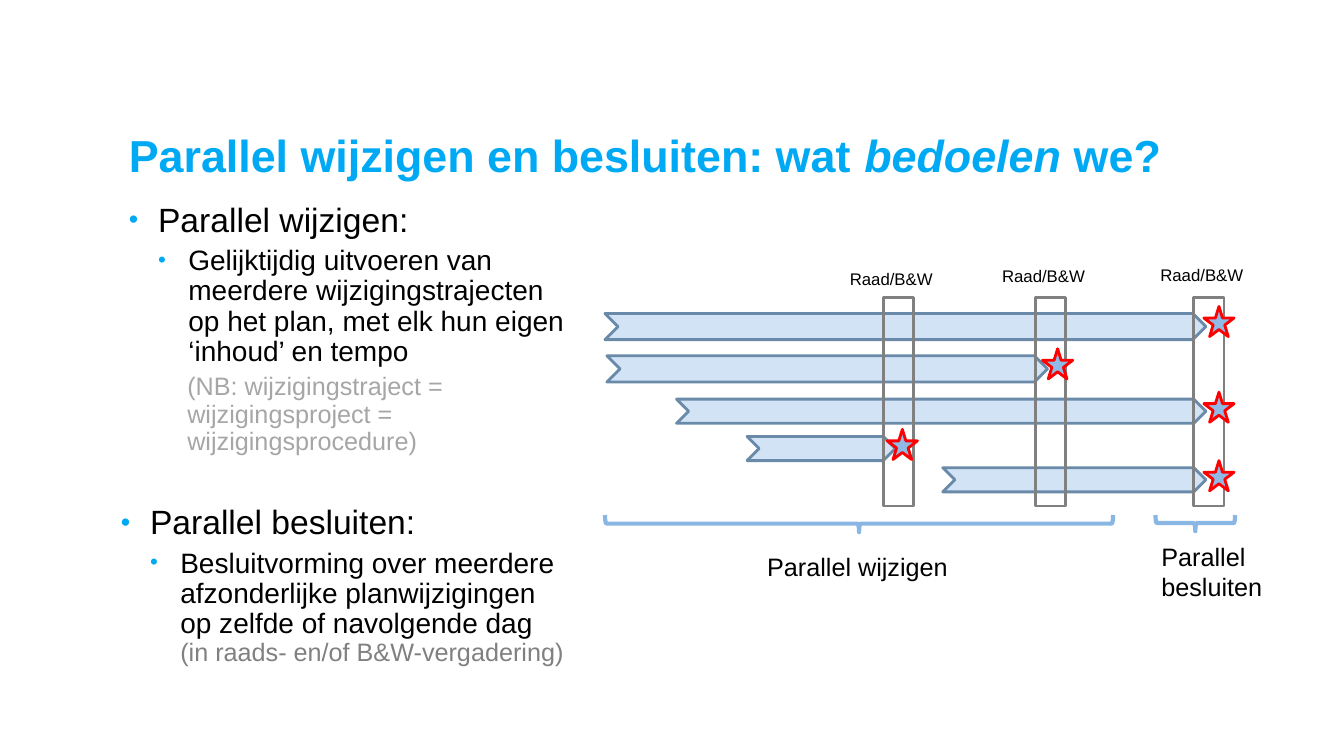
from pptx import Presentation
from pptx.dml.color import RGBColor
from pptx.enum.shapes import MSO_SHAPE
from pptx.enum.text import MSO_ANCHOR
from pptx.oxml import parse_xml
from pptx.oxml.ns import nsdecls
from pptx.util import Inches, Pt

COLORS = {
    "title": "00A9F3", "text": "000000", "note": "A6A6A6", "aside": "808080",
    "bar": "D2E3F5", "bar_line": "698AA9", "meeting": "808080",
    "star": "8EBAE5", "star_line": "FF0000", "brace": "89B6E2",
}


def rgb(name):
    return RGBColor.from_string(COLORS[name])


def add_text(s, x, y, w, h, wrap=True):
    sp = s.shapes.add_textbox(Inches(x), Inches(y), Inches(w), Inches(h))
    sp.text_frame.word_wrap = wrap
    return sp.text_frame


def style(r, size, color="text"):
    r.font.name = "Arial"
    r.font.size = Pt(size)
    r.font.color.rgb = rgb(color)


def add_label(s, x, y, w, h, text, size):
    tf = add_text(s, x, y, w, h, wrap=False)
    tf.text = text
    for p in tf.paragraphs:
        style(p.runs[0], size)


def add_figure(s, kind, x, y, w, h, line, fill=None, width=2):
    sp = s.shapes.add_shape(kind, Inches(x), Inches(y), Inches(w), Inches(h))
    sp.shadow.inherit = False
    sp.line.color.rgb = rgb(line)
    sp.line.width = Pt(width)
    if fill:
        sp.fill.solid()
        sp.fill.fore_color.rgb = rgb(fill)
    else:
        sp.fill.background()
    return sp


def add_brace(s, x, y, w, h):
    sp = add_figure(s, MSO_SHAPE.RIGHT_BRACE, x + (w - h) / 2, y + (h - w) / 2, h, w,
                    "brace", width=3)
    sp.rotation = 90


def indent(p, left, hanging, bullet):
    pPr = p._p.get_or_add_pPr()
    pPr.set("marL", str(Inches(left)))
    pPr.set("indent", str(Inches(-hanging)))
    if bullet:
        for xml in (
            f'<a:buClr {nsdecls("a")}><a:srgbClr val="{COLORS["title"]}"/></a:buClr>',
            f'<a:buSzPct {nsdecls("a")} val="80000"/>',
            f'<a:buFont {nsdecls("a")} typeface="Arial"/>',
            f'<a:buChar {nsdecls("a")} char="•"/>',
        ):
            pPr.append(parse_xml(xml))


def add_title(s, x, y, w, h):
    tf = add_text(s, x, y, w, h)
    tf.vertical_anchor = MSO_ANCHOR.MIDDLE
    p = tf.paragraphs[0]
    for text, italic in (("Parallel wijzigen en besluiten: wat ", False),
                         ("bedoelen", True), (" we?", False)):
        r = p.add_run()
        r.text = text
        style(r, 32, "title")
        r.font.bold = True
        r.font.italic = italic


def add_bullets(s, x, y, w, h, heading, body, note=None, aside=None):
    tf = add_text(s, x, y, w, h)
    tf.text = "\n".join(filter(None, (heading, body, note)))
    levels = ((24, "text", 0.29, 0.29, True), (20, "text", 0.59, 0.3, True),
              (18, "note", 0.58, 0, False))
    for i, (p, (size, color, left, hanging, bullet)) in enumerate(zip(tf.paragraphs, levels)):
        p.level = i
        p.line_spacing = 0.9
        p.space_before = Pt(4.8 if i else 0)
        indent(p, left, hanging, bullet)
        style(p.runs[0], size, color)
    if aside:
        p = tf.paragraphs[-1]
        p.add_line_break()
        r = p.add_run()
        r.text = aside
        style(r, 18, "aside")


def add_timeline(s, x, y):
    meetings = ((2.76, 0.04, 0.04), (4.27, 0.01, 0.07), (5.84, 0, 0.1))
    bars = ((0, 0.53, 0.26, 2), (0.02, 0.95, 0.26, 1), (0.71, 1.38, 0.24, 2),
            (1.41, 1.75, 0.24, 0), (3.35, 2.06, 0.24, 2))
    for start, top, height, meeting in bars:
        end = meetings[meeting][0] + 0.12
        add_figure(s, MSO_SHAPE.CHEVRON, x + start, y + top, end - start, height,
                   "bar_line", "bar")
    for left, label_top, _ in meetings:
        add_figure(s, MSO_SHAPE.RECTANGLE, x + left, y + 0.37, 0.3, 2.07, "meeting")
        add_label(s, x + left - 0.43, y + label_top, 1.03, 0.3, "Raad/B&W", 12)
    for _, top, _, meeting in bars:
        left, _, shift = meetings[meeting]
        add_figure(s, MSO_SHAPE.STAR_5_POINT, x + left + shift, y + top - 0.07, 0.3, 0.3,
                   "star_line", "star")
    add_brace(s, x, y + 2.53, 5.04, 0.17)
    add_label(s, x + 1.51, y + 2.84, 2.01, 0.4, "Parallel wijzigen", 18)
    add_brace(s, x + 5.46, y + 2.53, 0.79, 0.16)
    add_label(s, x + 5.42, y + 2.74, 1.21, 0.71, "Parallel\nbesluiten", 18)


def main():
    prs = Presentation()
    prs.slide_width, prs.slide_height = Inches(13.33), Inches(7.5)
    s = prs.slides.add_slide(prs.slide_layouts[6])
    add_title(s, 1.18, 1.18, 10.97, 0.71)
    add_bullets(s, 1.18, 1.97, 4.66, 2.91, "Parallel wijzigen:",
                "Gelijktijdig uitvoeren van meerdere wijzigingstrajecten op het plan, "
                "met elk hun eigen ‘inhoud’ en tempo",
                note="(NB: wijzigingstraject = wijzigingsproject = wijzigingsprocedure)")
    add_timeline(s, 6, 2.58)
    add_bullets(s, 1.1, 4.97, 4.66, 1.95, "Parallel besluiten:",
                "Besluitvorming over meerdere afzonderlijke planwijzigingen "
                "op zelfde of navolgende dag",
                aside="(in raads- en/of B&W-vergadering)")
    prs.save("out.pptx")


if __name__ == "__main__":
    main()
